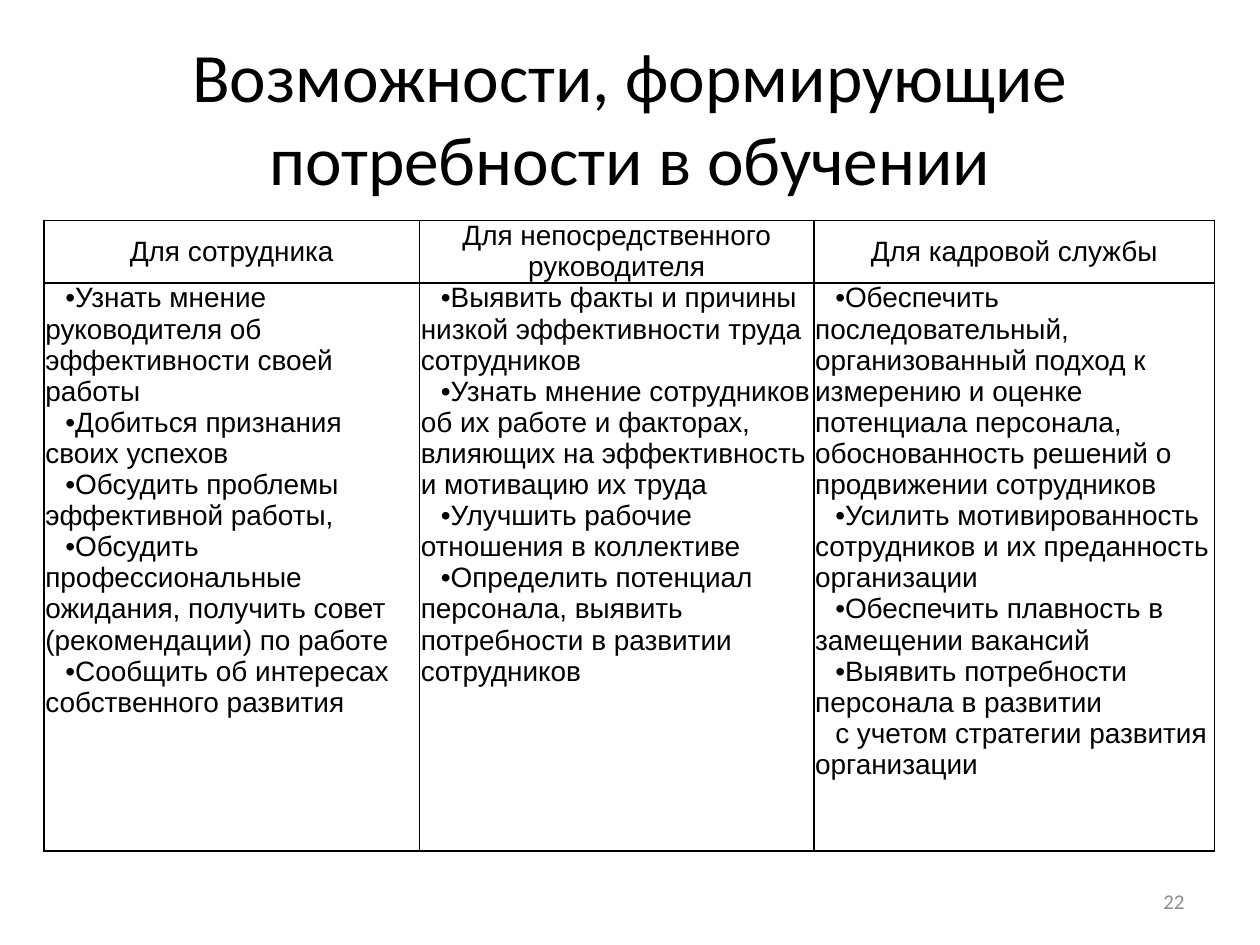
from dataclasses import dataclass

from lxml import etree
from pptx import Presentation
from pptx.dml.color import RGBColor
from pptx.enum.text import MSO_ANCHOR, MSO_AUTO_SIZE, PP_ALIGN
from pptx.oxml.ns import qn
from pptx.util import Inches, Pt

LEFT, CENTER, RIGHT = PP_ALIGN.LEFT, PP_ALIGN.CENTER, PP_ALIGN.RIGHT
TOP, MIDDLE, BOTTOM = MSO_ANCHOR.TOP, MSO_ANCHOR.MIDDLE, MSO_ANCHOR.BOTTOM
NO_AUTOFIT = MSO_AUTO_SIZE.NONE
TITLE_ONLY_LAYOUT = 5

TITLE = "Возможности, формирующие потребности в обучении"
HEADERS = [
    ("Для сотрудника", MIDDLE),
    ("Для непосредственного руководителя", BOTTOM),
    ("Для кадровой службы", MIDDLE),
]
OPPORTUNITIES = [
    [
        "Узнать мнение руководителя об эффективности своей работы",
        "Добиться признания своих успехов",
        "Обсудить проблемы эффективной работы,",
        "Обсудить профессиональные ожидания, получить совет (рекомендации) по работе",
        "Сообщить об интересах собственного развития",
    ],
    [
        "Выявить факты и причины низкой эффективности труда сотрудников",
        "Узнать мнение сотрудников об их работе и факторах, влияющих на эффективность "
        "и мотивацию их труда",
        "Улучшить рабочие отношения в коллективе",
        "Определить потенциал персонала, выявить потребности в развитии сотрудников",
    ],
    [
        "Обеспечить последовательный, организованный подход к измерению и оценке "
        "потенциала персонала, обоснованность решений о продвижении сотрудников",
        "Усилить мотивированность сотрудников и их преданность организации",
        "Обеспечить плавность в замещении вакансий",
        "Выявить потребности персонала в развитии",
        "с учетом стратегии развития организации",
    ],
]
UNBULLETED = {OPPORTUNITIES[-1][-1]}
COLUMN_WIDTHS = [2.98, 3.13, 3.18]
ROW_HEIGHTS = [0.44, 4.51]


@dataclass(frozen=True)
class Theme:
    """Colours, fonts and type sizes of the slide."""

    ink: RGBColor = RGBColor(0x00, 0x00, 0x00)
    paper: RGBColor = RGBColor(0xFF, 0xFF, 0xFF)
    muted: RGBColor = RGBColor(0x8C, 0x8C, 0x8C)
    heading_font: str = "Calibri"
    table_font: str = "Arial"
    title_size: float = 39.6
    table_size: float = 16
    number_size: float = 12
    border_width: float = 1


class SlideBuilder:
    """Adds styled elements to the current slide."""

    def __init__(self, slide, theme):
        self.slide = slide
        self.theme = theme

    def set_text(self, text_frame, lines, font, size, color, alignment):
        text_frame.text = "\n".join(lines)
        text_frame.word_wrap = True
        for paragraph in text_frame.paragraphs:
            paragraph.alignment = alignment
            for run in paragraph.runs:
                run.font.name = font
                run.font.size = Pt(size)
                run.font.color.rgb = color

    def title(self, text, left, top, width, height):
        shape = self.slide.shapes.title
        shape.left, shape.top = Inches(left), Inches(top)
        shape.width, shape.height = Inches(width), Inches(height)
        theme = self.theme
        self.set_text(shape.text_frame, [text], theme.heading_font, theme.title_size,
                      theme.ink, CENTER)
        shape.text_frame.auto_size = NO_AUTOFIT
        shape.text_frame.vertical_anchor = MIDDLE

    def slide_number(self, text, left, top, width, height):
        shape = self.slide.shapes.add_textbox(
            Inches(left), Inches(top), Inches(width), Inches(height))
        theme = self.theme
        self.set_text(shape.text_frame, [text], theme.heading_font, theme.number_size,
                      theme.muted, RIGHT)
        shape.text_frame.vertical_anchor = MIDDLE

    def table(self, left, top, column_widths, row_heights):
        table = self.slide.shapes.add_table(
            len(row_heights), len(column_widths), Inches(left), Inches(top),
            Inches(sum(column_widths)), Inches(sum(row_heights))).table
        for column, width in zip(table.columns, column_widths):
            column.width = Inches(width)
        for row, height in zip(table.rows, row_heights):
            row.height = Inches(height)
        return table

    def cell(self, cell, lines, alignment, anchor):
        theme = self.theme
        self.set_text(cell.text_frame, lines, theme.table_font, theme.table_size,
                      theme.ink, alignment)
        cell.vertical_anchor = anchor
        cell.margin_left = cell.margin_right = Inches(0.01)
        cell.margin_top = cell.margin_bottom = 0
        self.borders(cell)
        cell.fill.solid()
        cell.fill.fore_color.rgb = theme.paper

    def borders(self, cell):
        properties = cell._tc.get_or_add_tcPr()
        for side in ("a:lnL", "a:lnR", "a:lnT", "a:lnB"):
            line = etree.SubElement(properties, qn(side), w=str(Pt(self.theme.border_width)))
            fill = etree.SubElement(line, qn("a:solidFill"))
            etree.SubElement(fill, qn("a:srgbClr"), val=str(self.theme.ink))

    def bullets(self, text_frame, unbulleted):
        for paragraph in text_frame.paragraphs:
            properties = paragraph._p.get_or_add_pPr()
            properties.set("marL", "0")
            properties.set("indent", str(Inches(0.16)))
            if paragraph.text not in unbulleted:
                etree.SubElement(properties, qn("a:buFont"), typeface=self.theme.table_font)
                etree.SubElement(properties, qn("a:buChar"), char="•")


def main():
    presentation = Presentation()
    presentation.slide_width, presentation.slide_height = Inches(10), Inches(7.5)
    layout = presentation.slide_layouts[TITLE_ONLY_LAYOUT]
    builder = SlideBuilder(presentation.slides.add_slide(layout), Theme())

    builder.title(TITLE, 0.5, 0.3, 9, 1.25)
    table = builder.table(0.35, 1.75, COLUMN_WIDTHS, ROW_HEIGHTS)
    for index, ((header, anchor), items) in enumerate(zip(HEADERS, OPPORTUNITIES)):
        builder.cell(table.cell(0, index), [header], CENTER, anchor)
        body = table.cell(1, index)
        builder.cell(body, items, LEFT, TOP)
        builder.bullets(body.text_frame, UNBULLETED)
    builder.slide_number("22", 7.17, 6.95, 2.33, 0.4)

    presentation.save("out.pptx")


if __name__ == "__main__":
    main()
